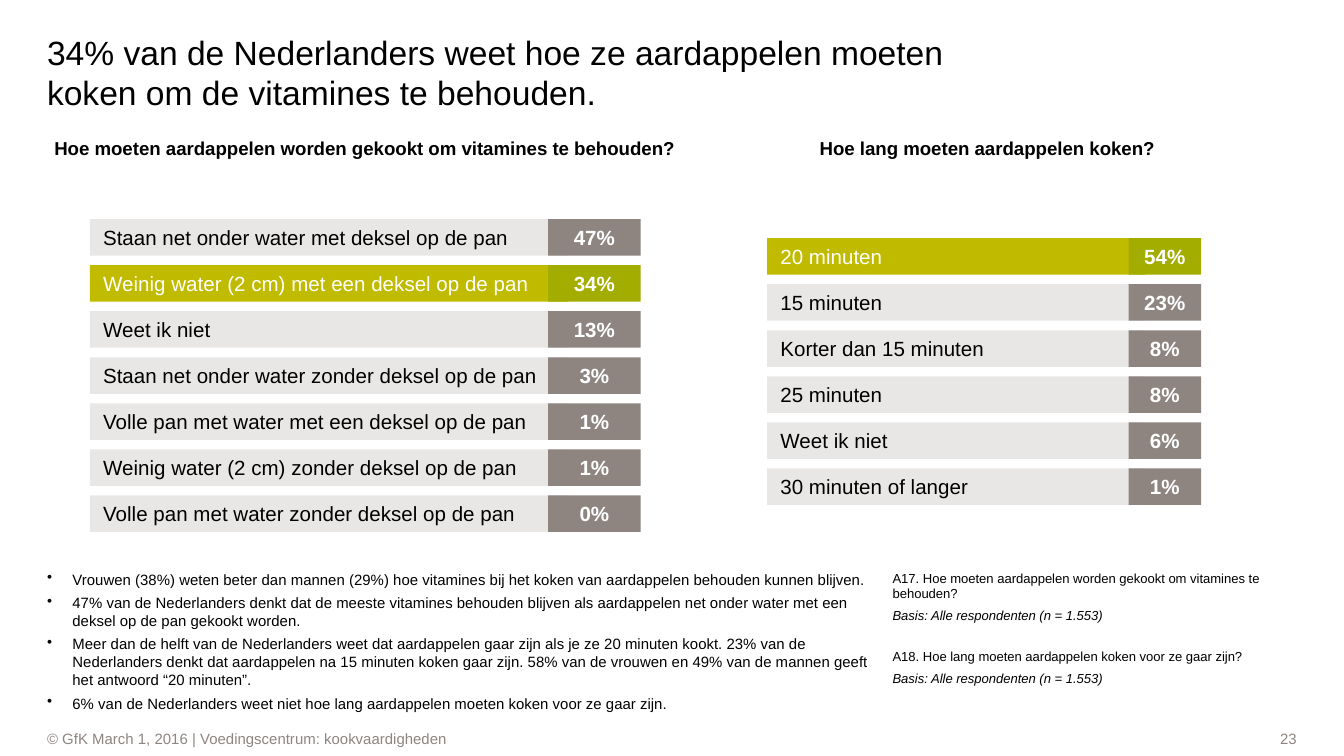
from dataclasses import dataclass

from lxml.etree import SubElement
from pptx import Presentation
from pptx.dml.color import RGBColor
from pptx.enum.shapes import MSO_SHAPE
from pptx.enum.text import MSO_ANCHOR, PP_ALIGN
from pptx.oxml.ns import qn
from pptx.util import Cm, Pt


@dataclass(frozen=True)
class Theme:
    font: str = "Arial"
    black: RGBColor = RGBColor.from_string("000000")
    white: RGBColor = RGBColor.from_string("FFFFFF")
    pale: RGBColor = RGBColor.from_string("E8E7E6")
    grey: RGBColor = RGBColor.from_string("8E8581")
    lime: RGBColor = RGBColor.from_string("C1BB00")
    green: RGBColor = RGBColor.from_string("A2AD00")
    title: Pt = Pt(18)
    answer: Pt = Pt(11)
    heading: Pt = Pt(10)
    body: Pt = Pt(8)
    source: Pt = Pt(7)


theme = Theme()
NO_MARGINS = dict(margin_left=0, margin_top=0, margin_right=0, margin_bottom=0)
BODY_FRAME = dict(NO_MARGINS, margin_top=Cm(0.05))
LABEL_FRAME = dict(margin_left=Cm(0.25), margin_top=Cm(0.2),
                   margin_right=Cm(0.25), margin_bottom=Cm(0.2),
                   vertical_anchor=MSO_ANCHOR.MIDDLE)
SHARE_FRAME = dict(vertical_anchor=MSO_ANCHOR.MIDDLE)
FOOTER_FRAME = dict(NO_MARGINS, vertical_anchor=MSO_ANCHOR.MIDDLE)


def write(shape, texts, frame_format, size, color=theme.black, bold=False,
          align=PP_ALIGN.LEFT):
    """Fill a shape with one paragraph per text."""
    frame = shape.text_frame
    for name, value in dict(frame_format, word_wrap=True).items():
        setattr(frame, name, value)
    for index, text in enumerate(texts):
        paragraph = frame.add_paragraph() if index else frame.paragraphs[0]
        paragraph.alignment = align
        if index:
            paragraph.space_before = Pt(3)
        run = paragraph.add_run()
        run.text = text
        for name, value in dict(name=theme.font, size=size, bold=bold).items():
            setattr(run.font, name, value)
        run.font.color.rgb = color
    return frame.paragraphs


def add_block(left, top, width, height, fill):
    """Add a plain filled rectangle; lengths in centimetres."""
    block = slide.shapes.add_shape(
        MSO_SHAPE.RECTANGLE, Cm(left), Cm(top), Cm(width), Cm(height))
    block.shadow.inherit = False
    block.fill.solid()
    block.fill.fore_color.rgb = fill
    block.line.fill.background()
    return block


presentation = Presentation()
presentation.slide_width, presentation.slide_height = Cm(25.4), Cm(14.28)
slide = presentation.slides.add_slide(presentation.slide_layouts[6])

# Footer
footer = [
    (20.9, 3.61, "23", PP_ALIGN.RIGHT),
    (0.89, 19.6, "© GfK March 1, 2016 | Voedingscentrum: kookvaardigheden",
     PP_ALIGN.LEFT),
]
for left, width, text, align in footer:
    write(add_block(left, 13.74, width, 0.41, theme.white), [text],
          FOOTER_FRAME, theme.body, theme.grey, align=align)

# Title
title = slide.shapes.add_textbox(Cm(0.89), Cm(0.53), Cm(17.81), Cm(1.6))
write(title, ["34% van de Nederlanders weet hoe ze aardappelen moeten koken "
              "om de vitamines te behouden."],
      dict(NO_MARGINS, vertical_anchor=MSO_ANCHOR.BOTTOM), theme.title)

# Findings with bullets
findings = slide.shapes.add_textbox(Cm(0.89), Cm(10.72), Cm(15.8), Cm(2.69))
finding_texts = [
    "Vrouwen (38%) weten beter dan mannen (29%) hoe vitamines bij het koken "
    "van aardappelen behouden kunnen blijven.",
    "47% van de Nederlanders denkt dat de meeste vitamines behouden blijven "
    "als aardappelen net onder water met een deksel op de pan gekookt worden.",
    "Meer dan de helft van de Nederlanders weet dat aardappelen gaar zijn als "
    "je ze 20 minuten kookt. 23% van de Nederlanders denkt dat aardappelen na "
    "15 minuten koken gaar zijn. 58% van de vrouwen en 49% van de mannen geeft "
    "het antwoord “20 minuten”.",
    "6% van de Nederlanders weet niet hoe lang aardappelen moeten koken voor "
    "ze gaar zijn.",
]
for finding in write(findings, finding_texts, BODY_FRAME, theme.body):
    properties = finding._p.get_or_add_pPr()
    properties.set("marL", str(Cm(0.48)))
    properties.set("indent", str(-Cm(0.48)))
    SubElement(properties, qn("a:buChar"), char="•")

# Survey questions and their base
sources = slide.shapes.add_textbox(Cm(16.87), Cm(10.72), Cm(7.62), Cm(2.69))
base = "Basis: Alle respondenten (n = 1.553)"
source_lines = write(sources, [
    "A17. Hoe moeten aardappelen worden gekookt om vitamines te behouden?",
    base,
    "A18. Hoe lang moeten aardappelen koken voor ze gaar zijn?",
    base,
], BODY_FRAME, theme.source)
for base_line in source_lines[1::2]:
    base_line.runs[0].font.italic = True
source_lines[2].space_before = Pt(14)

# Two questions: heading and rows of answers, the right answer in green
ROW_HEIGHT, ROW_PITCH = 0.69, 0.87
questions = [
    dict(heading="Hoe moeten aardappelen worden gekookt om vitamines te behouden?",
         heading_left=0.89, heading_width=11.99, top=4.14,
         label_left=1.7, label_width=9.04, share_left=10.36, share_width=1.75,
         correct="Weinig water (2 cm) met een deksel op de pan",
         answers=[("Staan net onder water met deksel op de pan", "47%"),
                  ("Weinig water (2 cm) met een deksel op de pan", "34%"),
                  ("Weet ik niet", "13%"),
                  ("Staan net onder water zonder deksel op de pan", "3%"),
                  ("Volle pan met water met een deksel op de pan", "1%"),
                  ("Weinig water (2 cm) zonder deksel op de pan", "1%"),
                  ("Volle pan met water zonder deksel op de pan", "0%")]),
    dict(heading="Hoe lang moeten aardappelen koken?",
         heading_left=12.8, heading_width=11.71, top=4.5,
         label_left=14.5, label_width=7.14, share_left=21.33, share_width=1.37,
         correct="20 minuten",
         answers=[("20 minuten", "54%"),
                  ("15 minuten", "23%"),
                  ("Korter dan 15 minuten", "8%"),
                  ("25 minuten", "8%"),
                  ("Weet ik niet", "6%"),
                  ("30 minuten of langer", "1%")]),
]
for question in questions:
    heading = slide.shapes.add_textbox(
        Cm(question["heading_left"]), Cm(2.54),
        Cm(question["heading_width"]), Cm(8))
    write(heading, [question["heading"]], BODY_FRAME, theme.heading,
          bold=True, align=PP_ALIGN.CENTER)

    for row, (answer, share) in enumerate(question["answers"]):
        top = question["top"] + row * ROW_PITCH
        if answer == question["correct"]:
            label_fill, label_color, share_fill = theme.lime, theme.white, theme.green
        else:
            label_fill, label_color, share_fill = theme.pale, theme.black, theme.grey
        label_block = add_block(question["label_left"], top,
                                question["label_width"], ROW_HEIGHT, label_fill)
        write(label_block, [answer], LABEL_FRAME, theme.answer, label_color)
        share_block = add_block(question["share_left"], top,
                                question["share_width"], ROW_HEIGHT, share_fill)
        write(share_block, [share], SHARE_FRAME, theme.answer, theme.white,
              bold=True, align=PP_ALIGN.CENTER)

presentation.save("out.pptx")
